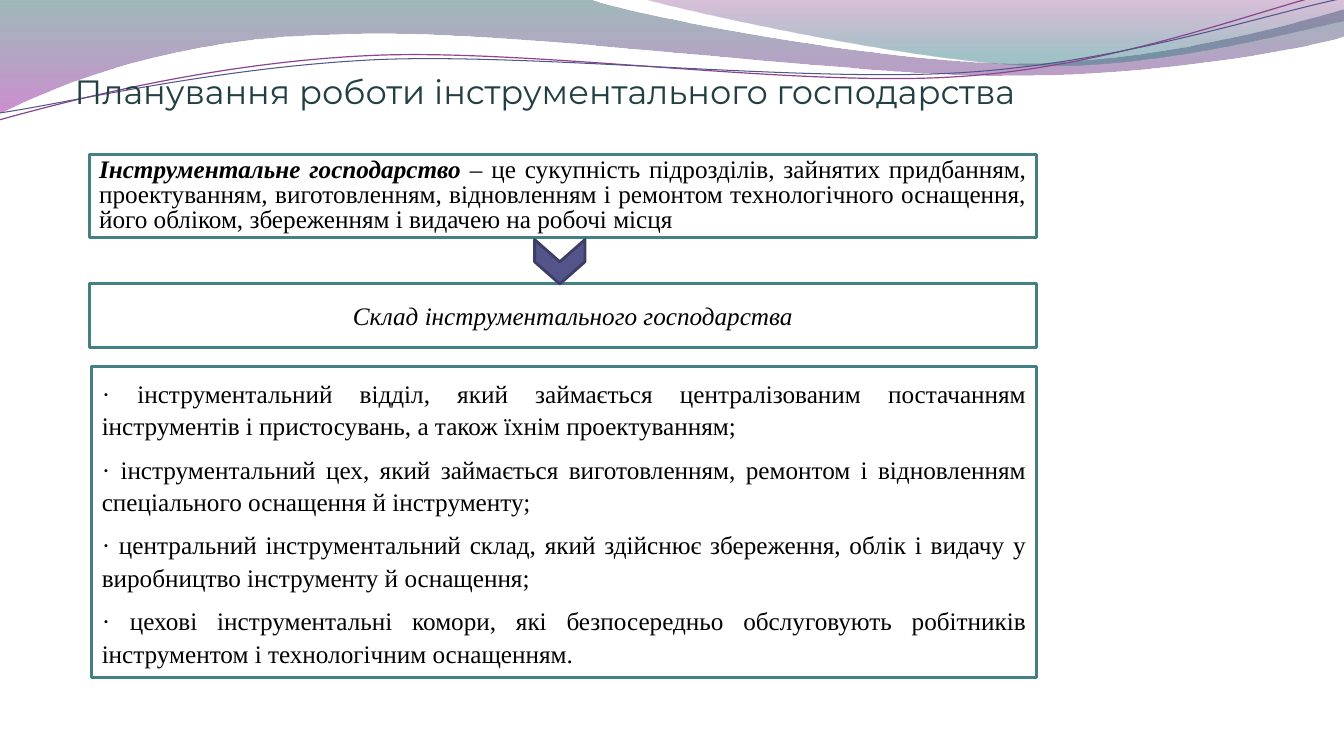
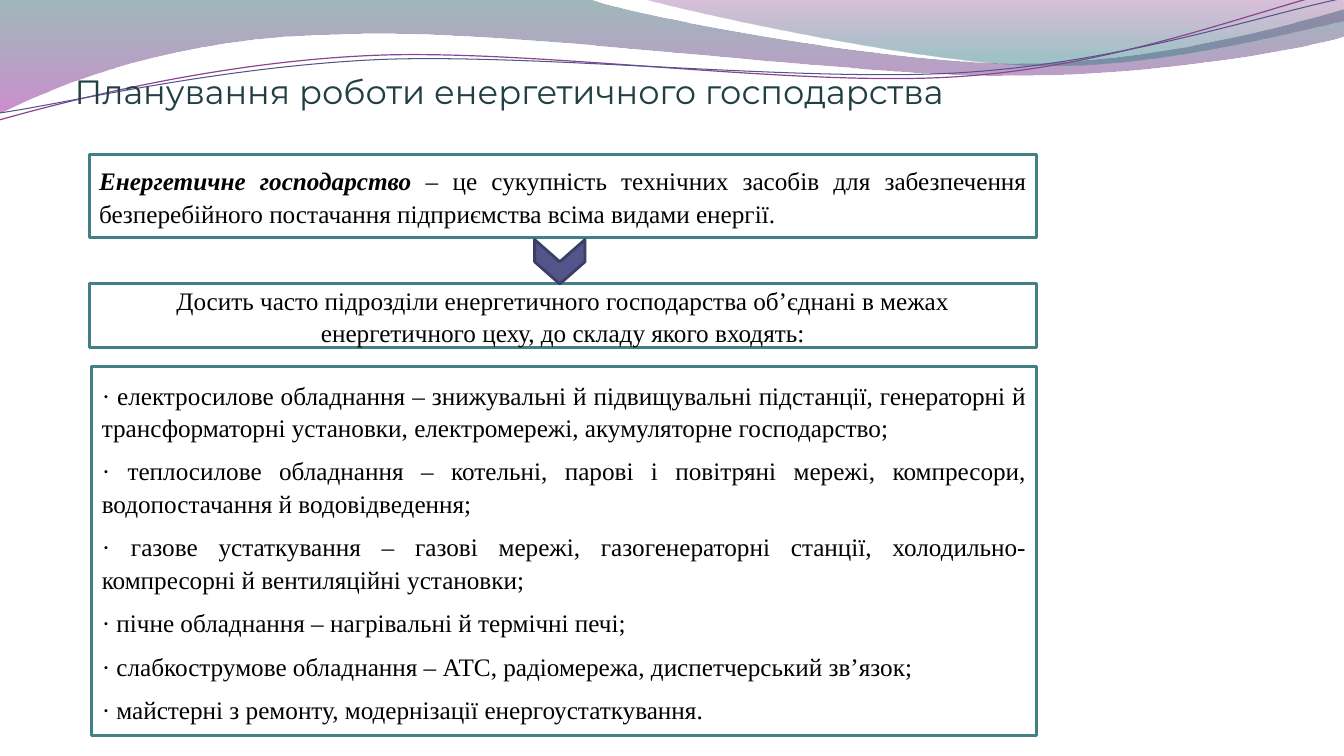
from pptx import Presentation
from pptx.dml.color import RGBColor
from pptx.enum.shapes import MSO_SHAPE as Shape
from pptx.enum.text import MSO_ANCHOR as Anchor, MSO_AUTO_SIZE as AutoSize, PP_ALIGN as Align
from pptx.oxml.ns import qn
from pptx.util import Pt
from lxml.etree import SubElement

COLORS = {
    "paper": "FFFFFF", "ink": "000000", "title": "224043", "border": "438086",
    "indigo": "53548A", "indigo_dark": "3D3E66", "plum": "8D4490",
    "teal_deep": "2D6368", "magenta": "A530A9", "purple": "7F2F82", "teal": "2F7B82",
}
TITLE_FONT, BODY_FONT = "Montserrat", "Times New Roman"
STRAND_TILT = 357.3

# Outlines in points: a pair is a straight corner, six numbers are a Bezier curve
BROAD_WAVE = [
    (0, 0), (422.6, -0.4),
    (456.5, 12.2, 637.2, 45.4, 727.9, 45.4), (819.4, 45.4, 920.2, 18.7, 959.8, 6.5),
    (961.2, 25.9),
    (943.9, 31.7, 835.2, 54.7, 715.7, 54), (596.9, 54, 366.5, 20.2, 247, 24.5),
    (123.8, 25.9, 43.9, 59.8, -0.7, 81.4), (0, 0),
]
RIGHT_WAVE = [
    (460.1, -0.4),
    (488.9, 7.9, 654.5, 44.6, 738, 46.8), (821.5, 49.7, 923, 23, 959.8, 15.1),
    (959.8, 0), (460.1, -0.4),
]
# Strands are drawn level and tilted afterwards
PLUM_STRAND = [
    (-2.3, 63.1), (45.1, 52.3, 152.1, 29.2, 266, 29.6),
    (379.8, 29.9, 567.7, 66.8, 683.2, 64.4), (798.5, 62.6, 902.6, 25.7, 960.1, 15.5),
]
INDIGO_STRAND = [
    (-1.3, 58), (44.4, 53.7, 157.2, 32.3, 272.4, 32.7),
    (386.9, 33.8, 572.2, 63.4, 687, 61.6), (802.3, 59.8, 904.6, 30, 962.1, 21.2),
]

# Paragraph styles
BODY = {"align": Align.JUSTIFY, "spacing": 1.07, "after": 8}
TIGHT = {"align": Align.JUSTIFY, "spacing": Pt(18)}
CENTERED = {**BODY, "align": Align.CENTER}
HEADING = {"align": Align.CENTER, "indent": 14.4, "italic": True}

SLIDES = [
    {
        "title": "Планування роботи інструментального господарства",
        "term": "Інструментальне господарство ",
        "definition": "– це сукупність підрозділів, зайнятих придбанням, проектуванням, "
                      "виготовленням, відновленням і ремонтом технологічного оснащення, "
                      "його обліком, збереженням і видачею на робочі місця",
        "definition_style": TIGHT,
        "heading": "Склад інструментального господарства",
        "heading_style": HEADING,
        "list_height": 221.8,
        "units": [
            "· інструментальний відділ, який займається централізованим постачанням "
            "інструментів і пристосувань, а також їхнім проектуванням;",
            "· інструментальний цех, який займається виготовленням, ремонтом і "
            "відновленням спеціального оснащення й інструменту;",
            "· центральний інструментальний склад, який здійснює збереження, облік і "
            "видачу у виробництво інструменту й оснащення;",
            "· цехові інструментальні комори, які безпосередньо обслуговують робітників "
            "інструментом і технологічним оснащенням.",
        ],
    },
    {
        "title": "Планування роботи енергетичного господарства",
        "term": "Енергетичне господарство ",
        "definition": "– це сукупність технічних засобів для забезпечення безперебійного "
                      "постачання підприємства всіма видами енергії.",
        "definition_style": BODY,
        "heading": "Досить часто підрозділи енергетичного господарства об’єднані в межах "
                   "енергетичного цеху, до складу якого входять:",
        "heading_style": CENTERED,
        "list_height": 263.5,
        "units": [
            "· електросилове обладнання – знижувальні й підвищувальні підстанції, "
            "генераторні й трансформаторні установки, електромережі, акумуляторне "
            "господарство;",
            "· теплосилове обладнання – котельні, парові і повітряні мережі, компресори, "
            "водопостачання й водовідведення;",
            "· газове устаткування – газові мережі, газогенераторні станції, "
            "холодильно-компресорні й вентиляційні установки;",
            "· пічне обладнання – нагрівальні й термічні печі;",
            "· слабкострумове обладнання – АТС, радіомережа, диспетчерський зв’язок;",
            "· майстерні з ремонту, модернізації енергоустаткування.",
        ],
    },
]


def rgb(name):
    return RGBColor.from_string(COLORS[name])


def set_font(run, name, size, color, bold=False, italic=False):
    font = run.font
    font.name, font.size, font.bold, font.italic = name, Pt(size), bold, italic
    font.color.rgb = rgb(color)


def set_line(shape, color, width):
    shape.line.color.rgb = rgb(color)
    shape.line.width = Pt(width)


# Decoration shared through the layout
def add_outline(slide, outline, close):
    """Build a freeform through all nodes, then bend node triples into curves."""
    start, *nodes = [(Pt(step[i]), Pt(step[i + 1]))
                     for step in outline for i in range(0, len(step), 2)]
    builder = slide.shapes.build_freeform(*start)
    builder.add_line_segments(nodes, close=close)
    shape = builder.convert_to_shape()
    shape.shadow.inherit = False

    segments = iter(list(shape.element.iter(qn("a:lnTo"))))
    for step in outline[1:]:
        segment = next(segments)
        if len(step) == 6:
            track = segment.getparent()
            curve = track.makeelement(qn("a:cubicBezTo"))
            track.replace(segment, curve)
            curve.append(segment[0])
            for _ in range(2):
                handle = next(segments)
                curve.append(handle[0])
                track.remove(handle)
    return shape


def add_wave(slide, outline, stops):
    wave = add_outline(slide, outline, close=True)
    wave.line.fill.background()
    wave.fill.gradient()
    wave.fill.gradient_angle = 270
    for stop, (position, color, _) in zip(wave.fill.gradient_stops, stops):
        stop.position = position
        stop.color.rgb = rgb(color)
    for tint, (_, _, opacity) in zip(wave.element.iter(qn("a:srgbClr")), stops):
        SubElement(tint, qn("a:alpha")).set("val", str(opacity * 1000))
    return wave


def add_strand(slide, outline, color, width):
    strand = add_outline(slide, outline, close=False)
    strand.rotation = STRAND_TILT
    strand.fill.background()
    set_line(strand, color, width)
    return strand


def decorate_layout(layout, slide):
    """Draw the waves once and move them to the back of the layout."""
    waves = [
        add_wave(slide, BROAD_WAVE, [(0, "teal_deep", 45), (1, "magenta", 55)]),
        add_wave(slide, RIGHT_WAVE, [(0, "purple", 30), (0.8, "teal", 45)]),
        add_strand(slide, PLUM_STRAND, "plum", 0.85),
        add_strand(slide, INDIGO_STRAND, "indigo", 0.75),
    ]
    for order, wave in enumerate(waves):
        wave.element.nvSpPr.cNvPr.set("id", str(100 + order))
        layout.shapes.element.insert(2 + order, wave.element)


# Slide content
def set_title(slide, text):
    title = slide.shapes.title
    title.left, title.top, title.width, title.height = Pt(53.3), Pt(28.8), Pt(697), Pt(50.4)
    frame = title.text_frame
    frame.text = text
    frame.auto_size, frame.word_wrap = AutoSize.NONE, True
    frame.vertical_anchor = Anchor.BOTTOM
    frame.margin_left = frame.margin_right = frame.margin_bottom = 0
    frame.margin_top = Pt(3.6)
    frame.paragraphs[0].alignment = Align.LEFT
    set_font(frame.paragraphs[0].runs[0], TITLE_FONT, 24, "title")


def add_shape(slide, kind, bounds, fill, line):
    shape = slide.shapes.add_shape(kind, *map(Pt, bounds))
    shape.shadow.inherit = False
    shape.fill.solid()
    shape.fill.fore_color.rgb = rgb(fill)
    set_line(shape, line, 2)
    return shape


def add_box(slide, bounds, texts, style, term=""):
    """Framed text; a term opens the first paragraph in bold italics."""
    frame = add_shape(slide, Shape.RECTANGLE, bounds, "paper", "border").text_frame
    frame.text = "\n".join(texts)
    frame.word_wrap = True
    frame.vertical_anchor = Anchor.MIDDLE
    if term:
        opening = frame.paragraphs[0]
        opening.text = term
        opening.add_run().text = texts[0]
    for paragraph in frame.paragraphs:
        paragraph.alignment = style["align"]
        paragraph.line_spacing = style.get("spacing")
        paragraph.space_after = Pt(style.get("after", 0))
        if "indent" in style:
            paragraph._p.get_or_add_pPr().set("indent", str(Pt(style["indent"])))
        for run in paragraph.runs:
            is_term = run.text == term
            set_font(run, BODY_FONT, 18, "ink", is_term, is_term or style.get("italic", False))


def add_down_chevron(slide):
    chevron = add_shape(slide, Shape.CHEVRON, (384, 169, 31.7, 36), "indigo", "indigo_dark")
    chevron.rotation = 90


def fill_slide(slide, content):
    set_title(slide, content["title"])
    add_box(slide, (63.7, 110.2, 676.7, 59.5), [content["definition"]],
            content["definition_style"], content["term"])
    add_box(slide, (63.7, 202.4, 676.7, 45.7), [content["heading"]], content["heading_style"])
    add_down_chevron(slide)
    add_box(slide, (65.6, 262, 674.8, content["list_height"]), content["units"], BODY)


def main():
    deck = Presentation()
    deck.slide_width, deck.slide_height = Pt(960), Pt(540)
    layout = deck.slide_layouts[5]
    slides = [deck.slides.add_slide(layout) for _ in SLIDES]
    decorate_layout(layout, slides[0])
    for slide, content in zip(slides, SLIDES):
        fill_slide(slide, content)
    deck.save("out.pptx")


if __name__ == "__main__":
    main()
